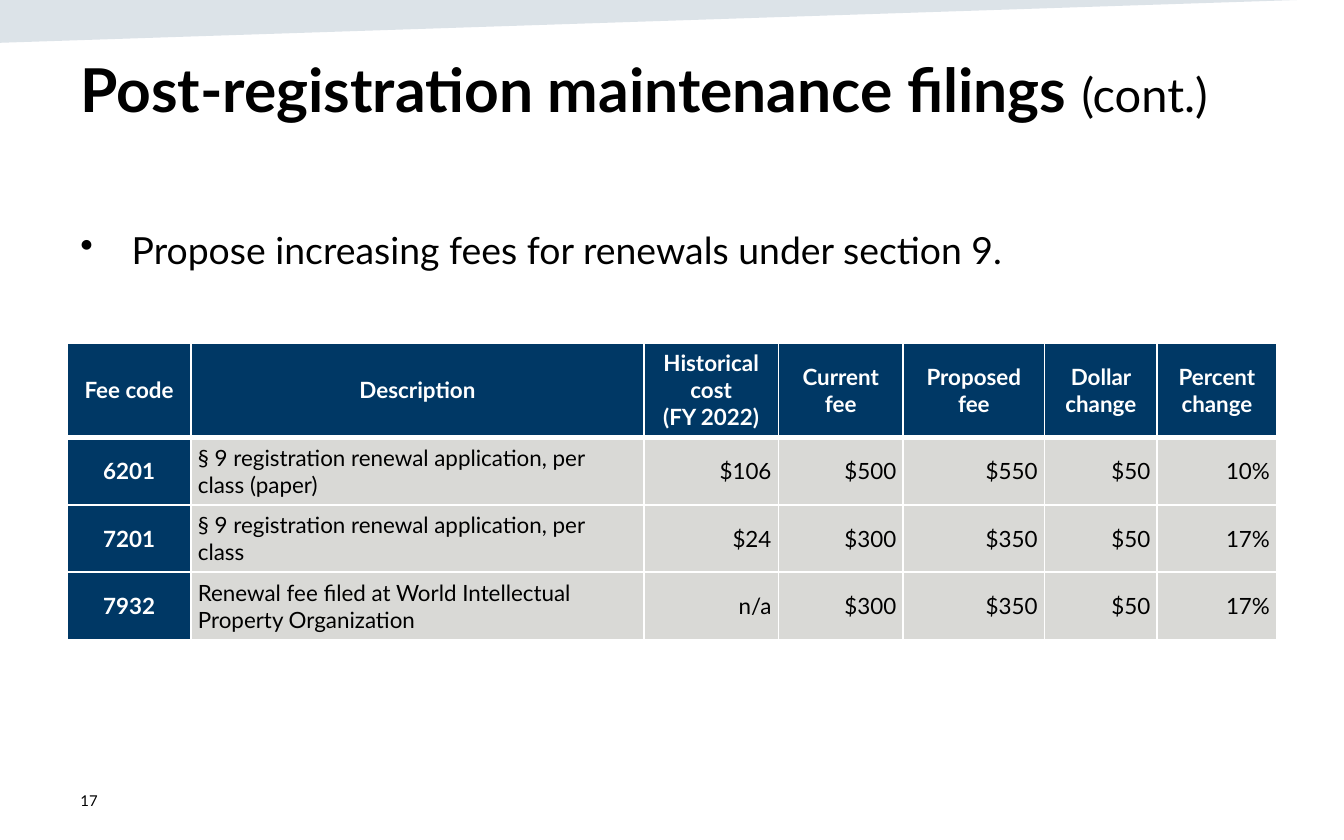
from lxml import etree
from pptx import Presentation
from pptx.dml.color import RGBColor
from pptx.enum.text import MSO_ANCHOR, PP_ALIGN
from pptx.oxml.ns import qn
from pptx.util import Cm, Pt

TOP, MIDDLE = MSO_ANCHOR.TOP, MSO_ANCHOR.MIDDLE
LEFT, CENTER, RIGHT = PP_ALIGN.LEFT, PP_ALIGN.CENTER, PP_ALIGN.RIGHT

BLACK = RGBColor(0x00, 0x00, 0x00)
WHITE = RGBColor(0xFF, 0xFF, 0xFF)
NAVY = RGBColor(0x00, 0x38, 0x65)
GREY = RGBColor(0xD9, 0xD9, 0xD6)
BANNER_BLUE = RGBColor(0x16, 0x44, 0x69)

FONT = "Lato"
MARGIN = Cm(1.27)
CONTENT_WIDTH = Cm(22.86)

COLUMN_WIDTHS = [2.34, 8.56, 2.54, 2.36, 2.67, 2.13, 2.26]
HEADER_HEIGHT = Cm(1.75)
ROW_HEIGHT = Cm(1.27)
FEES = [
    ["Fee code", "Description", "Historical cost\n(FY 2022)", "Current fee",
     "Proposed fee", "Dollar change", "Percent change"],
    ["6201", "§ 9 registration renewal application, per class (paper)",
     "$106", "$500", "$550", "$50", "10%"],
    ["7201", "§ 9 registration renewal application, per class",
     "$24", "$300", "$350", "$50", "17%"],
    ["7932", "Renewal fee filed at World Intellectual Property Organization",
     "n/a", "$300", "$350", "$50", "17%"],
]


def set_font(font, size, color=BLACK, bold=False):
    font.name = FONT
    font.size = Pt(size)
    font.bold = bold
    font.color.rgb = color


def add_banner(slide):
    """Draw the pale wedge along the top edge."""
    builder = slide.shapes.build_freeform(0, 0)
    builder.add_line_segments([(0, Cm(0.81)), (Cm(25.45), Cm(-0.03))], close=True)
    banner = builder.convert_to_shape()
    banner.shadow.inherit = False
    banner.line.fill.background()
    banner.fill.solid()
    banner.fill.fore_color.rgb = BANNER_BLUE
    color = banner.fill._xPr.find(".//" + qn("a:srgbClr"))
    etree.SubElement(color, qn("a:alpha"), val="15000")


def add_text(slide, top, width, height, text, size, bold=False, anchor=TOP):
    """Add a text box at the left margin and return its paragraph."""
    frame = slide.shapes.add_textbox(MARGIN, top, width, height).text_frame
    frame.word_wrap = True
    frame.vertical_anchor = anchor
    paragraph = frame.paragraphs[0]
    set_font(paragraph.font, size, bold=bold)
    paragraph.add_run().text = text
    return paragraph


def add_title(slide):
    paragraph = add_text(slide, Cm(0.86), CONTENT_WIDTH, Cm(2.64),
                         "Post-registration maintenance filings ", 32.4, bold=True)
    suffix = paragraph.add_run()
    suffix.text = "(cont.)"
    suffix.font.size = Pt(25.2)
    suffix.font.bold = False


def add_bullet(slide):
    paragraph = add_text(slide, Cm(4.01), CONTENT_WIDTH, Cm(10.5),
                         "Propose increasing fees for renewals under section 9.", 20)
    paragraph.line_spacing = 1.2
    paragraph.space_before = Pt(9)
    properties = paragraph._p.get_or_add_pPr()
    properties.set("marL", str(Cm(0.97)))
    properties.set("indent", str(Cm(-0.97)))
    bullet = etree.Element(qn("a:buChar"), char="•")
    properties.find(qn("a:spcBef")).addnext(bullet)


def set_borders(cell, top, bottom):
    """Give a cell white borders, with top and bottom widths in points."""
    properties = cell._tc.get_or_add_tcPr()
    for side, width in (("L", 1), ("R", 1), ("T", top), ("B", bottom)):
        line = etree.SubElement(properties, qn(f"a:ln{side}"), w=str(Pt(width)))
        fill = etree.SubElement(line, qn("a:solidFill"))
        etree.SubElement(fill, qn("a:srgbClr"), val=str(WHITE))


def fill_cell(cell, text, row, column):
    is_heading = row == 0 or column == 0
    set_borders(cell, top=3 if row == 1 else 1, bottom=3 if row == 0 else 1)
    cell.fill.solid()
    cell.fill.fore_color.rgb = NAVY if is_heading else GREY
    cell.vertical_anchor = MIDDLE
    cell.margin_left = cell.margin_right = Cm(0.13)
    cell.margin_top = cell.margin_bottom = Cm(0.13)
    cell.text = text
    for paragraph in cell.text_frame.paragraphs:
        set_font(paragraph.font, 12, WHITE if is_heading else BLACK, is_heading)
        if is_heading:
            paragraph.alignment = CENTER
        else:
            paragraph.alignment = LEFT if column == 1 else RIGHT
        if row > 0:
            paragraph.space_before = paragraph.space_after = Pt(6)


def add_fee_table(slide):
    height = HEADER_HEIGHT + ROW_HEIGHT * (len(FEES) - 1)
    table = slide.shapes.add_table(len(FEES), len(COLUMN_WIDTHS), MARGIN, Cm(6.48),
                                   CONTENT_WIDTH, height).table
    table.horz_banding = False
    for column, width in zip(table.columns, COLUMN_WIDTHS):
        column.width = Cm(width)
    for row, texts in enumerate(FEES):
        table.rows[row].height = ROW_HEIGHT if row else HEADER_HEIGHT
        for column, text in enumerate(texts):
            fill_cell(table.cell(row, column), text, row, column)


def main():
    presentation = Presentation()
    presentation.slide_width = Cm(25.4)
    presentation.slide_height = Cm(15.88)
    slide = presentation.slides.add_slide(presentation.slide_layouts[6])
    add_banner(slide)
    add_title(slide)
    add_bullet(slide)
    add_fee_table(slide)
    add_text(slide, Cm(14.71), Cm(5.72), Cm(0.84), "17", 8, anchor=MIDDLE)
    presentation.save("out.pptx")


if __name__ == "__main__":
    main()
